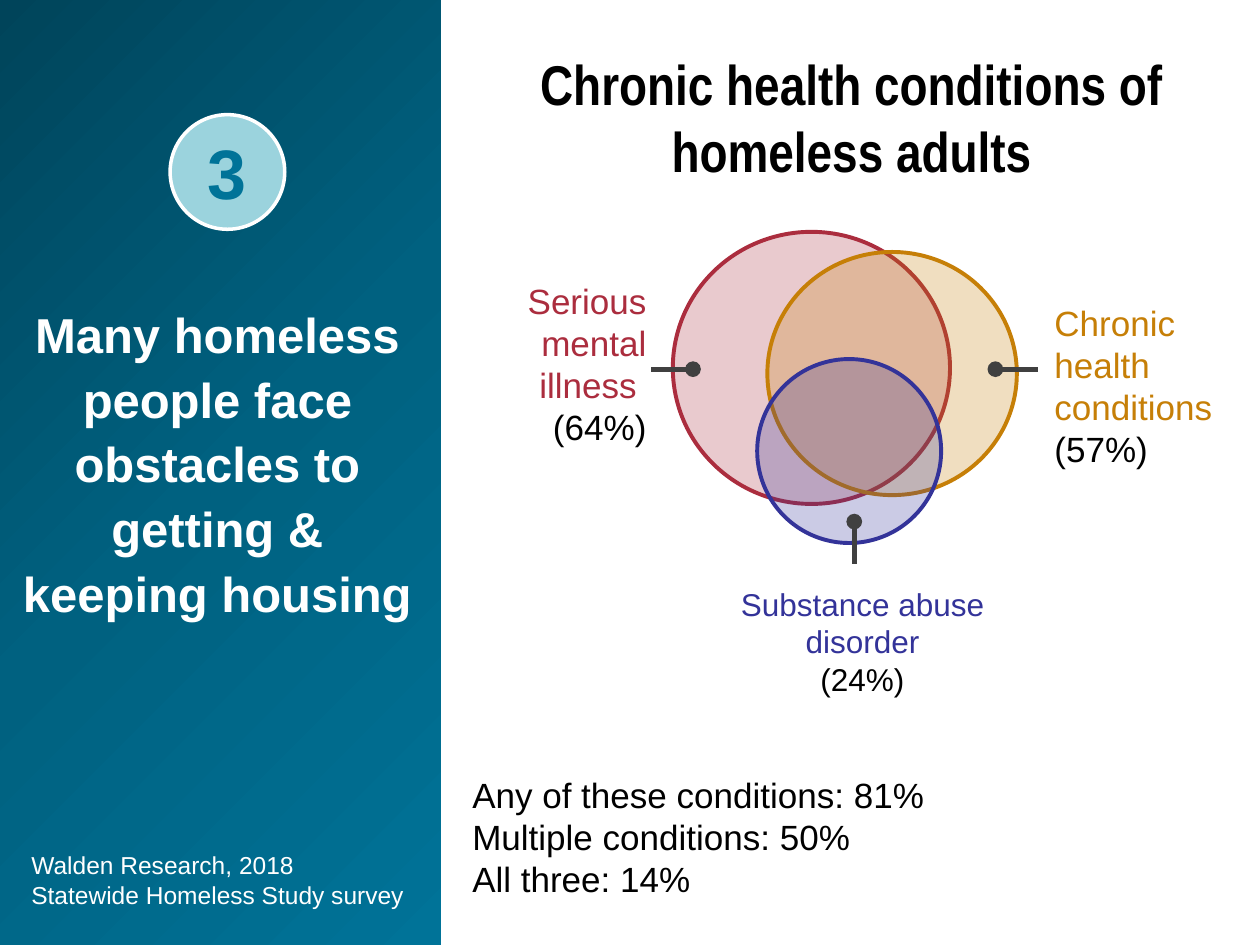
from copy import deepcopy

from lxml import etree
from pptx import Presentation
from pptx import util as u
from pptx.dml.color import RGBColor
from pptx.enum import shapes, text
from pptx.oxml.ns import qn

WHITE, BLACK, TEAL, AQUA, GREY = "FFFFFF", "000000", "007398", "9BD3DD", "404040"
RED, OCHRE, INDIGO = "AB2D3E", "C67F07", "333399"
LEFT, CENTER, RIGHT = text.PP_ALIGN.LEFT, text.PP_ALIGN.CENTER, text.PP_ALIGN.RIGHT


def rgb(value):
    return RGBColor.from_string(value)


def inches(*lengths):
    return [u.Inches(length) for length in lengths]


class SlideBuilder:
    font = "Arial"

    def __init__(self, slide):
        self.slide = slide

    def fill_text(self, frame, lines, size, align=LEFT, bold=False, font=None,
                  before=0, spacing=None):
        """Fill a text frame with (words, colour) paragraphs."""
        for index, (words, color) in enumerate(lines):
            paragraph = frame.add_paragraph() if index else frame.paragraphs[0]
            paragraph.text = words
            paragraph.alignment = align
            paragraph.space_before = u.Pt(before)
            paragraph.line_spacing = spacing
            paragraph.font.name = font or self.font
            paragraph.font.size = u.Pt(size)
            paragraph.font.bold = bold
            paragraph.font.color.rgb = rgb(color)

    def text_box(self, box, lines, size, **style):
        frame = self.slide.shapes.add_textbox(*inches(*box)).text_frame
        frame.word_wrap = True
        self.fill_text(frame, lines, size, **style)

    def gradient_panel(self, box, colors):
        """Draw a borderless rectangle shaded evenly from top left to bottom right."""
        panel = self.slide.shapes.add_shape(shapes.MSO_SHAPE.RECTANGLE, *inches(*box))
        panel.shadow.inherit = False
        panel.line.fill.background()
        panel.fill.gradient()
        panel.fill.gradient_angle = 315
        stop_list = panel.element.spPr.find(qn("a:gradFill")).find(qn("a:gsLst"))
        stop_list.insert(1, deepcopy(stop_list[0]))
        for index, (stop, color) in enumerate(zip(panel.fill.gradient_stops, colors)):
            stop.position = index / (len(colors) - 1)
            stop.color.rgb = rgb(color)

    def circle(self, box, fill, line, width, opacity=100):
        oval = self.slide.shapes.add_shape(shapes.MSO_SHAPE.OVAL, *inches(*box))
        oval.shadow.inherit = False
        oval.fill.solid()
        oval.fill.fore_color.rgb = rgb(fill)
        oval.line.color.rgb = rgb(line)
        oval.line.width = u.Pt(width)
        if opacity < 100:
            color = oval.element.spPr.find(qn("a:solidFill"))[0]
            etree.SubElement(color, qn("a:alpha"), val=str(opacity * 1000))
        return oval

    def pointer(self, start, end):
        """Draw a line with a dot at its start."""
        line = self.slide.shapes.add_connector(
            shapes.MSO_CONNECTOR.STRAIGHT, *inches(*start, *end))
        line.line.color.rgb = rgb(GREY)
        line.line.width = u.Pt(3)
        properties = line.element.spPr
        etree.SubElement(properties.find(qn("a:ln")), qn("a:headEnd"), type="oval")
        etree.SubElement(properties, qn("a:effectLst"))


def main():
    deck = Presentation()
    deck.slide_width, deck.slide_height = inches(10, 7.5)
    page = SlideBuilder(deck.slides.add_slide(deck.slide_layouts[6]))

    # Side panel
    page.gradient_panel((0, 0, 3.5, 7.5), ("00445A", "006180", TEAL))
    page.text_box((0.15, 6.7, 3.31, 0.8),
                  [("Walden Research, 2018\vStatewide Homeless Study survey", WHITE)], 14)
    page.text_box((0, 2.32, 3.45, 4.76),
                  [("Many homeless people face obstacles to getting & keeping housing",
                    WHITE)],
                  28, align=CENTER, bold=True, before=6, spacing=1.1)
    badge = page.circle((1.35, 0.91, 0.91, 0.91), AQUA, WHITE, 2)
    badge.text_frame.vertical_anchor = text.MSO_ANCHOR.MIDDLE
    page.fill_text(badge.text_frame, [("3", TEAL)], 40, align=CENTER, bold=True)

    page.text_box((3.99, 0.34, 5.54, 1.31),
                  [("Chronic health conditions of homeless adults", BLACK)],
                  32, align=CENTER, bold=True, font="Arial Narrow", before=9)

    # Venn diagram
    page.text_box((3.33, 2.17, 1.9, 1.8),
                  [("Serious mental", RED), (" illness ", RED), (" (64%)", BLACK)],
                  20, align=RIGHT)
    page.text_box((8.27, 2.34, 1.88, 1.84),
                  [("Chronic health", OCHRE), ("conditions", OCHRE), ("(57%)", BLACK)], 20)
    page.text_box((5.62, 4.59, 2.45, 1.23),
                  [("Substance abuse disorder", INDIGO), ("(24%)", BLACK)],
                  18, align=CENTER)
    conditions = [
        ((5.34, 1.84, 2.2, 2.16), RED, (5.5, 2.93), (5.17, 2.93)),
        ((6.09, 2, 1.98, 1.93), OCHRE, (7.9, 2.93), (8.24, 2.93)),
        ((6.01, 2.85, 1.46, 1.46), INDIGO, (6.78, 4.14), (6.78, 4.48)),
    ]
    for box, color, dot, label_end in conditions:
        page.circle(box, color, color, 2.25, opacity=25)
        page.pointer(dot, label_end)

    totals = ("Any of these conditions: 81%", "Multiple conditions: 50%", "All three: 14%")
    page.text_box((3.65, 6.09, 5.06, 1), [(total, BLACK) for total in totals], 20)

    deck.save("out.pptx")


if __name__ == "__main__":
    main()
